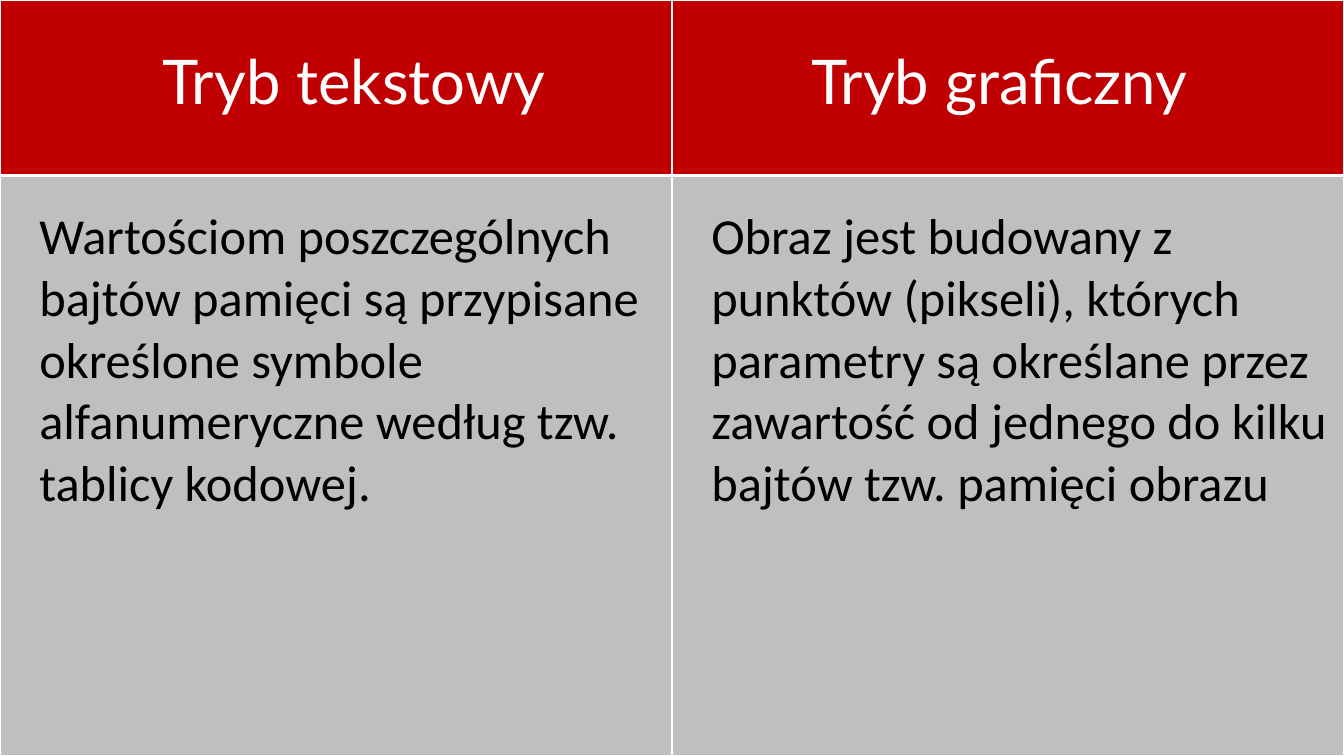
from dataclasses import dataclass

from lxml import etree
from pptx import Presentation
from pptx.dml.color import RGBColor
from pptx.oxml.ns import qn
from pptx.table import _Cell
from pptx.util import Inches, Pt

COLORS = {"header": "C00000", "body": "808080", "white": "FFFFFF", "black": "000000"}
BLANK_LAYOUT = 6
SLIDE_WIDTH, SLIDE_HEIGHT = 13.33, 7.5
HEADER_HEIGHT = 1.74
THIN, THICK = 1, 3


@dataclass
class RowStyle:
    font: str
    size: int
    color: str
    fill: str
    opacity: int
    top_margin: float
    borders: dict[str, int]


@dataclass
class CellContent:
    text: str
    left_margin: float
    right_margin: float


HEADER = RowStyle("Lato", 44, "white", "header", 100, 0.43,
                  {"L": THIN, "R": THIN, "T": THIN, "B": THICK})
BODY = RowStyle("Calibri", 36, "black", "body", 50, 0.31,
                {"L": THIN, "R": THIN, "T": THICK, "B": THIN})

ROWS = [
    (HEADER, [
        CellContent("Tryb tekstowy", 1.61, 0.47),
        CellContent("Tryb graficzny", 1.38, 0.1),
    ]),
    (BODY, [
        CellContent("Wartościom poszczególnych bajtów pamięci są przypisane określone "
                    "symbole alfanumeryczne według tzw. tablicy kodowej.", 0.39, 0.1),
        CellContent("Obraz jest budowany z punktów (pikseli), których parametry są "
                    "określane przez zawartość od jednego do kilku bajtów tzw. "
                    "pamięci obrazu", 0.39, 0),
    ]),
]


def write_text(cell: _Cell, text: str, *, font: str, size: int, color: str) -> None:
    run = cell.text_frame.paragraphs[0].add_run()
    run.text = text
    run.font.name = font
    run.font.size = Pt(size)
    run.font.bold = False
    run.font.color.rgb = RGBColor.from_string(COLORS[color])


def add_borders(cell: _Cell, borders: dict[str, int]) -> None:
    properties = cell._tc.get_or_add_tcPr()
    for side, width in borders.items():
        line = etree.SubElement(properties, qn(f"a:ln{side}"), w=str(Pt(width)))
        fill = etree.SubElement(line, qn("a:solidFill"))
        etree.SubElement(fill, qn("a:srgbClr"), val=COLORS["white"])


def fill_cell(cell: _Cell, color: str, opacity: int) -> None:
    cell.fill.solid()
    cell.fill.fore_color.rgb = RGBColor.from_string(COLORS[color])
    if opacity < 100:
        solid_fill = cell._tc.tcPr.find(qn("a:solidFill"))
        etree.SubElement(solid_fill[0], qn("a:alpha"), val=str(opacity * 1000))


def draw_cell(cell: _Cell, content: CellContent, style: RowStyle) -> None:
    cell.margin_left = Inches(content.left_margin)
    cell.margin_right = Inches(content.right_margin)
    cell.margin_top = Inches(style.top_margin)
    cell.margin_bottom = Inches(0.05)
    write_text(cell, content.text, font=style.font, size=style.size, color=style.color)
    # Borders come before the fill in the cell properties
    add_borders(cell, style.borders)
    fill_cell(cell, style.fill, style.opacity)


def main() -> None:
    presentation = Presentation()
    presentation.slide_width = Inches(SLIDE_WIDTH)
    presentation.slide_height = Inches(SLIDE_HEIGHT)
    slide = presentation.slides.add_slide(presentation.slide_layouts[BLANK_LAYOUT])

    # Comparison table covering the whole slide
    table = slide.shapes.add_table(2, 2, 0, 0, Inches(SLIDE_WIDTH), Inches(SLIDE_HEIGHT)).table
    table.horz_banding = False
    table.rows[0].height = Inches(HEADER_HEIGHT)
    table.rows[1].height = Inches(SLIDE_HEIGHT - HEADER_HEIGHT)

    # Header and body cells
    for row_index, (style, contents) in enumerate(ROWS):
        for column_index, content in enumerate(contents):
            draw_cell(table.cell(row_index, column_index), content, style)

    presentation.save("out.pptx")


if __name__ == "__main__":
    main()
